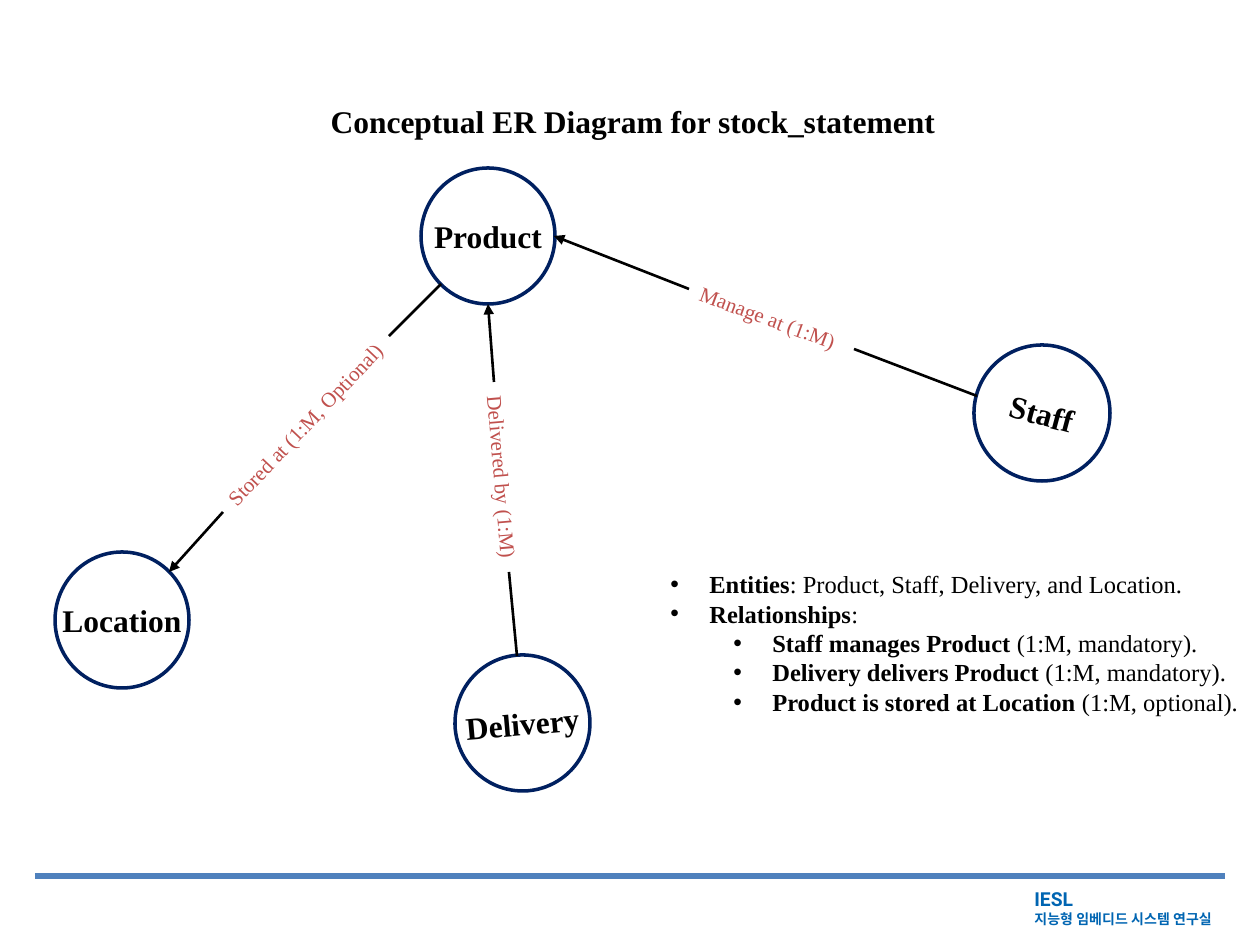
from lxml import etree
from pptx import Presentation, util as u
from pptx.dml.color import RGBColor
from pptx.enum import shapes, text
from pptx.oxml.ns import qn

PX = 914400 / 126
SERIF = "Times New Roman"
COLORS = {"black": "000000", "navy": "002060", "red": "C0504D",
          "rule": "4F81BD", "lab": "0065B2"}

TITLE = "Conceptual ER Diagram for stock_statement"
# name, (left, top, width, height), rotation
ENTITIES = [
    ("Product", (421, 168, 134, 136), 0),
    ("Staff", (974, 345, 136, 136), 15),
    ("Delivery", (455, 655, 135, 136), 354.9),
    ("Location", (55, 552, 134, 136), 0),
]
RELATIONS = [
    ("Stored at (1:M, Optional)", (185, 404, 242, 38), 313.5),
    ("Delivered by (1:M)", (407, 459, 190, 38), 85.2),
    ("Manage at (1:M)", (684, 300, 175, 38), 20.3),
]
# from x, from y, to x, to y, arrowhead at end
LINKS = [
    (441, 284, 389, 336, False),
    (223, 512, 169, 572, True),
    (494, 382, 488, 304, True),
    (517, 656, 509, 572, False),
    (977, 396, 854, 349, False),
    (689, 289, 554, 236, True),
]
# level, bold part, plain part
NOTES = [
    (0, "Entities", ": Product, Staff, Delivery, and Location."),
    (0, "Relationships", ":"),
    (1, "Staff manages Product", " (1:M, mandatory)."),
    (1, "Delivery delivers Product", " (1:M, mandatory)."),
    (1, "Product is stored at Location", " (1:M, optional)."),
]
LAB = [("IESL", 11, "Roboto"), ("지능형 임베디드 시스템 연구실", 8, "Noto Sans CJK KR")]


def px(*values):
    return [u.Emu(round(v * PX)) for v in values]


def rgb(name):
    return RGBColor.from_string(COLORS[name])


def add_run(p, words, size, color="black", bold=False, font=SERIF):
    r = p.add_run()
    r.text = words
    r.font.size, r.font.bold, r.font.name = u.Pt(size), bold, font
    r.font.color.rgb = rgb(color)
    etree.SubElement(r.font._element, qn("a:ea"), typeface=font)


def add_box(s, box, wrap=False):
    sp = s.shapes.add_textbox(*px(*box))
    sp.text_frame.word_wrap = wrap
    sp.text_frame.auto_size = text.MSO_AUTO_SIZE.SHAPE_TO_FIT_TEXT
    return sp


def add_line(s, ends, color, width, arrow=False):
    c = s.shapes.add_connector(shapes.MSO_CONNECTOR.STRAIGHT, *px(*ends))
    c.line.color.rgb = rgb(color)
    c.line.width = u.Pt(width)
    if arrow:
        etree.SubElement(c.line._get_or_add_ln(), qn("a:tailEnd"), type="triangle")
    etree.SubElement(c._element.spPr, qn("a:effectLst"))


def add_entity(s, name, box, angle):
    sp = s.shapes.add_shape(shapes.MSO_SHAPE.OVAL, *px(*box))
    sp.rotation = angle
    sp.shadow.inherit = False
    sp.fill.background()
    sp.line.color.rgb = rgb("navy")
    sp.line.width = u.Pt(2)
    tf = sp.text_frame
    tf.margin_left = tf.margin_top = tf.margin_right = tf.margin_bottom = 0
    tf.word_wrap = False
    tf.vertical_anchor = text.MSO_ANCHOR.MIDDLE
    p = tf.paragraphs[0]
    p.alignment = text.PP_ALIGN.CENTER
    add_run(p, name, 18, bold=True)


def add_bullet(p, level):
    p.level = level
    pPr = p._p.get_or_add_pPr()
    indent, margin = px(39, 39 + 63 * level)
    pPr.set("marL", str(margin))
    pPr.set("indent", str(-indent))
    etree.SubElement(pPr, qn("a:buFont"), typeface="Arial")
    etree.SubElement(pPr, qn("a:buChar"), char="•")


def main():
    prs = Presentation()
    prs.slide_width, prs.slide_height = u.Inches(10), u.Inches(7.5)
    s = prs.slides.add_slide(prs.slide_layouts[6])

    # Footer rule and lab name
    add_line(s, (35, 876, 1225, 876), "rule", 3)
    tf = add_box(s, (1022, 893, 219, 40)).text_frame
    for i, (words, size, font) in enumerate(LAB):
        p = tf.add_paragraph() if i else tf.paragraphs[0]
        add_run(p, words, size, "lab", True, font)
    tf.paragraphs[0].line_spacing = u.Pt(6.4)

    # Title
    p = add_box(s, (49, 96, 1168, 58), wrap=True).text_frame.paragraphs[0]
    p.alignment = text.PP_ALIGN.CENTER
    add_run(p, TITLE, 18, bold=True)

    # Diagram
    for entity in ENTITIES:
        add_entity(s, *entity)
    for words, box, angle in RELATIONS:
        sp = add_box(s, box)
        sp.rotation = angle
        add_run(sp.text_frame.paragraphs[0], words, 12, "red")
    for *ends, arrow in LINKS:
        add_line(s, ends, "black", 1.5, arrow)

    # Notes
    tf = add_box(s, (658, 563, 602, 190), wrap=True).text_frame
    for i, (level, strong, plain) in enumerate(NOTES):
        p = tf.add_paragraph() if i else tf.paragraphs[0]
        add_bullet(p, level)
        add_run(p, strong, 14, bold=True)
        add_run(p, plain, 14)

    prs.save("out.pptx")


if __name__ == "__main__":
    main()
